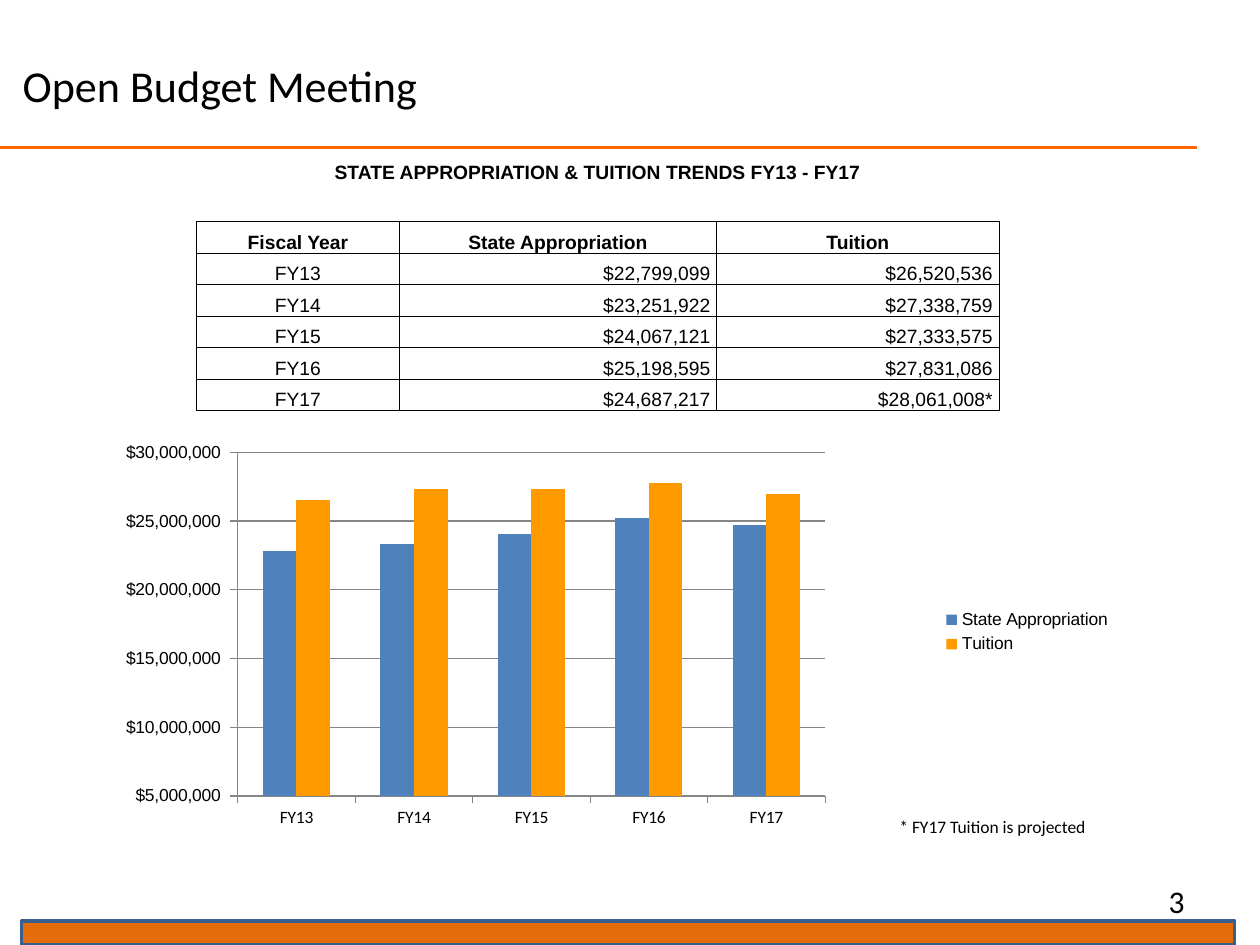
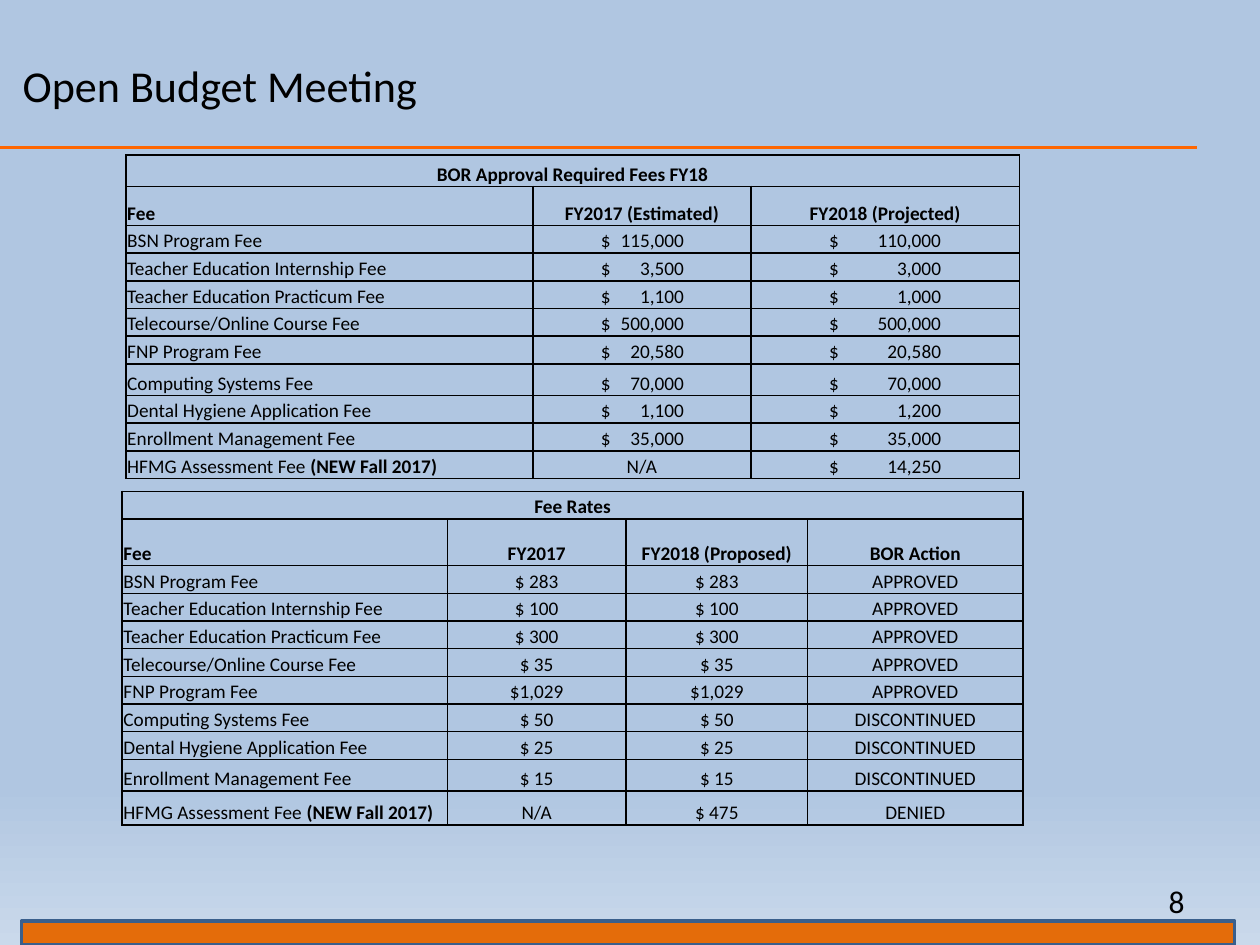
from lxml import etree
from pptx import Presentation
from pptx.chart.data import CategoryChartData
from pptx.dml.color import RGBColor
from pptx.enum.chart import XL_CHART_TYPE, XL_LEGEND_POSITION, XL_TICK_MARK
from pptx.enum.shapes import MSO_CONNECTOR, MSO_SHAPE
from pptx.enum.text import MSO_ANCHOR, PP_ALIGN
from pptx.oxml import parse_xml
from pptx.oxml.ns import nsdecls, qn
from pptx.util import Inches, Pt

LEFT, CENTER, RIGHT = PP_ALIGN.LEFT, PP_ALIGN.CENTER, PP_ALIGN.RIGHT
MIDDLE, BOTTOM = MSO_ANCHOR.MIDDLE, MSO_ANCHOR.BOTTOM
CLUSTERED = XL_CHART_TYPE.COLUMN_CLUSTERED
LEGEND_RIGHT = XL_LEGEND_POSITION.RIGHT
TICK_OUTSIDE = XL_TICK_MARK.OUTSIDE
STRAIGHT = MSO_CONNECTOR.STRAIGHT
RECTANGLE = MSO_SHAPE.RECTANGLE

BLACK = RGBColor(0x00, 0x00, 0x00)
WHITE = RGBColor(0xFF, 0xFF, 0xFF)
RULE_ORANGE = RGBColor(0xFF, 0x66, 0x00)
BAND_ORANGE = RGBColor(0xE4, 0x6C, 0x0A)
BAND_EDGE = RGBColor(0x3A, 0x5F, 0x8C)
SKY = RGBColor(0xB0, 0xC6, 0xE1)
PALE_SKY = RGBColor(0xCA, 0xD9, 0xEB)
STATE_BLUE = RGBColor(0x4F, 0x81, 0xBD)
TUITION_ORANGE = RGBColor(0xFF, 0x99, 0x00)
AXIS_GRAY = RGBColor(0x86, 0x86, 0x86)

deck = Presentation()
deck.slide_width, deck.slide_height = Inches(10), Inches(7.5)
STEP = deck.slide_width // 1000


def grid(*steps):
    return [STEP * step for step in steps]


def write(paragraph, text, align, size, name="Calibri", bold=False):
    paragraph.alignment = align
    for index, part in enumerate(text.split("|")):
        span = paragraph.add_run()
        span.text = part
        values = {"size": Pt(size), "name": name, "bold": bold or index > 0}
        for attribute, value in values.items():
            setattr(span.font, attribute, value)
        span.font.color.rgb = BLACK


pages = []
for number in ("3", "8"):
    page = deck.slides.add_slide(deck.slide_layouts[5])
    pages.append(page)

    rule = page.shapes.add_connector(STRAIGHT, *grid(0, 117, 950, 117))
    rule.line.color.rgb = RULE_ORANGE
    rule.line.width = Pt(1.5)
    etree.SubElement(rule._element.spPr, qn("a:effectLst"))

    number_box = page.shapes.add_textbox(*grid(717, 695, 233, 40))
    number_box.text_frame.word_wrap = True
    number_box.text_frame.vertical_anchor = MIDDLE
    write(number_box.text_frame.paragraphs[0], number, RIGHT, 18)

    title = page.shapes.title
    title.left, title.top, title.width, title.height = grid(0, 42, 608, 50)
    title.text_frame.margin_left = STEP * 18
    title.text_frame.vertical_anchor = MIDDLE
    write(title.text_frame.paragraphs[0], "Open Budget Meeting", LEFT, 25.2)

    band = page.shapes.add_shape(RECTANGLE, *grid(17, 731, 963, 19))
    band.shadow.inherit = False
    band.fill.solid()
    band.fill.fore_color.rgb = BAND_ORANGE
    band.line.color.rgb = BAND_EDGE
    band.line.width = Pt(2)

trends_page, fees_page = pages
trends_page.background.fill.solid()
trends_page.background.fill.fore_color.rgb = WHITE
sky = fees_page.background.fill
sky.gradient()
sky.gradient_angle = 270
for stop, position, color in zip(sky.gradient_stops, (0.83, 1), (SKY, PALE_SKY)):
    stop.position = position
    stop.color.rgb = color

note = trends_page.shapes.add_textbox(*grid(704, 643, 237, 27))
note.text_frame.word_wrap = True
write(note.text_frame.paragraphs[0], "* FY17 Tuition is projected", LEFT, 10)

trends = {
    "page": trends_page, "at": (156, 121), "font": "Arial", "border": 0.5,
    "columns": (161, 252, 224), "heights": [25, 30] + [25] * 6,
    "aligns": (CENTER, RIGHT, RIGHT), "headings": 3, "first_bordered": 2,
    "spacing": 1, "tabs": {},
    "rows": [
        ("STATE APPROPRIATION & TUITION TRENDS FY13 - FY17", "", ""),
        ("", "", ""),
        ("Fiscal Year", "State Appropriation", "Tuition"),
        ("FY13", "$22,799,099", "$26,520,536"),
        ("FY14", "$23,251,922", "$27,338,759"),
        ("FY15", "$24,067,121", "$27,333,575"),
        ("FY16", "$25,198,595", "$27,831,086"),
        ("FY17", "$24,687,217", "$28,061,008*"),
    ],
}
rates = {
    "page": fees_page, "at": (97, 390), "font": "Calibri", "border": 1,
    "columns": (258, 142, 144, 171), "heights": [22, 37] + [22] * 7 + [25, 27],
    "aligns": (LEFT, CENTER, CENTER, CENTER), "headings": 2, "first_bordered": 0,
    "spacing": 1.07, "tabs": {},
    "rows": [
        ("Fee Rates", "", "", ""),
        ("Fee", "FY2017", "FY2018 (Proposed)", "BOR Action"),
        ("BSN Program Fee", "$ 283", "$ 283", "APPROVED"),
        ("Teacher Education Internship Fee", "$ 100", "$ 100", "APPROVED"),
        ("Teacher Education Practicum Fee", "$ 300", "$ 300", "APPROVED"),
        ("Telecourse/Online Course Fee", "$ 35", "$ 35", "APPROVED"),
        ("FNP Program Fee", "$1,029", "$1,029", "APPROVED"),
        ("Computing Systems Fee", "$ 50", "$ 50", "DISCONTINUED"),
        ("Dental Hygiene Application Fee", "$ 25", "$ 25", "DISCONTINUED"),
        ("Enrollment Management Fee", "$ 15", "$ 15", "DISCONTINUED"),
        ("HFMG Assessment Fee |(NEW Fall 2017)", "N/A", "$ 475", "DENIED"),
    ],
}
revenues = {
    "page": fees_page, "at": (100, 123), "font": "Calibri", "border": 1,
    "columns": (323, 173, 213), "heights": [25, 31] + [22] * 5 + [25] + [22] * 3,
    "aligns": (LEFT, CENTER, CENTER), "headings": 2, "first_bordered": 0,
    "spacing": 1.07, "tabs": {1: (54, 66), 2: (62, 89)},
    "rows": [
        ("BOR Approval Required Fees FY18", "", ""),
        ("Fee", "FY2017 (Estimated)", "FY2018 (Projected)"),
        ("BSN Program Fee", "$\t115,000", "$\t110,000"),
        ("Teacher Education Internship Fee", "$\t3,500", "$\t3,000"),
        ("Teacher Education Practicum Fee", "$\t1,100", "$\t1,000"),
        ("Telecourse/Online Course Fee", "$\t500,000", "$\t500,000"),
        ("FNP Program Fee", "$\t20,580", "$\t20,580"),
        ("Computing Systems Fee", "$\t70,000", "$\t70,000"),
        ("Dental Hygiene Application Fee", "$\t1,100", "$\t1,200"),
        ("Enrollment Management Fee", "$\t35,000", "$\t35,000"),
        ("HFMG Assessment Fee |(NEW Fall 2017)", "N/A", "$\t14,250"),
    ],
}

for layout in (trends, rates, revenues):
    rows, columns, heights = layout["rows"], layout["columns"], layout["heights"]
    frame = layout["page"].shapes.add_table(
        len(rows), len(columns), *grid(*layout["at"], sum(columns), sum(heights)))
    table = frame.table
    table.first_row = table.horz_banding = False
    for column, width in zip(table.columns, grid(*columns)):
        column.width = width
    for row, height in zip(table.rows, grid(*heights)):
        row.height = height
    table.cell(0, 0).merge(table.cell(0, len(columns) - 1))

    for row_index, texts in enumerate(rows):
        for column_index, text in enumerate(texts):
            cell = table.cell(row_index, column_index)
            heading = row_index < layout["headings"]
            align = layout["aligns"][column_index]
            if row_index == 0 or heading and column_index > 0:
                align = CENTER
            side = STEP * (5 if align == RIGHT else 1)
            margins = {"margin_left": STEP, "margin_right": side,
                       "margin_top": 0, "margin_bottom": 0}
            paragraph = cell.text_frame.paragraphs[0]
            if "\t" in text:
                indent, stop = layout["tabs"][column_index]
                margins["margin_left"] = STEP * indent
                align = LEFT
                tabs = etree.SubElement(
                    paragraph._p.get_or_add_pPr(), qn("a:tabLst"))
                etree.SubElement(
                    tabs, qn("a:tab"), pos=str(STEP * stop), algn="r")
            for attribute, value in margins.items():
                setattr(cell, attribute, value)
            cell.vertical_anchor = BOTTOM
            cell.fill.background()
            if text:
                paragraph.line_spacing = layout["spacing"]
                write(paragraph, text, align, 11, layout["font"], heading)

            offset = row_index - layout["first_bordered"]
            sides = "LRTB" if offset >= 0 else "B" if offset == -1 else ""
            for index, edge in enumerate(sides):
                cell._tc.get_or_add_tcPr().insert(index, parse_xml(
                    f'<a:ln{edge} {nsdecls("a")} w="{Pt(layout["border"])}">'
                    f'<a:solidFill><a:srgbClr val="{BLACK}"/></a:solidFill>'
                    f'</a:ln{edge}>'))

data = CategoryChartData()
data.categories = ["FY13", "FY14", "FY15", "FY16", "FY17"]
data.add_series("State Appropriation",
                (22800000, 23300000, 24100000, 25200000, 24700000))
data.add_series("Tuition", (26500000, 27300000, 27300000, 27800000, 27000000))
chart = trends_page.shapes.add_chart(
    CLUSTERED, *grid(100, 350, 792, 307), data).chart
chart.has_title = False
chart.has_legend = True
chart.legend.position = LEGEND_RIGHT
chart.legend.include_in_layout = False

plot = chart.plots[0]
plot.gap_width = 150
plot.overlap = 0
plot.vary_by_categories = False
for series, color in zip(plot.series, (STATE_BLUE, TUITION_ORANGE)):
    series.format.fill.solid()
    series.format.fill.fore_color.rgb = color

amounts, years = chart.value_axis, chart.category_axis
scale = {"minimum_scale": 5000000, "maximum_scale": 30000000,
         "major_unit": 5000000, "has_major_gridlines": True}
for attribute, value in scale.items():
    setattr(amounts, attribute, value)
amounts.tick_labels.number_format = '"$"#,##0_);\\("$"#,##0\\)'
amounts.tick_labels.number_format_is_linked = False
for axis in (amounts, years):
    axis.major_tick_mark = TICK_OUTSIDE
for line in (amounts.format.line, years.format.line,
             amounts.major_gridlines.format.line):
    line.color.rgb = AXIS_GRAY
    line.width = Pt(0.75)

fonts = ((chart.font, "Calibri"), (years.tick_labels.font, "Calibri"),
         (amounts.tick_labels.font, "Arial"), (chart.legend.font, "Arial"))
for font, name in fonts:
    font.name = name
    font.size = Pt(10)
    font.color.rgb = BLACK

plot_area = chart._chartSpace.chart.plotArea
for old_layout in plot_area.findall(qn("c:layout")):
    plot_area.remove(old_layout)
plot_layout = parse_xml(
    f'<c:layout {nsdecls("c")}><c:manualLayout><c:layoutTarget val="inner"/>'
    '<c:xMode val="edge"/><c:yMode val="edge"/><c:x val="0.11"/>'
    '<c:y val="0.03"/><c:w val="0.59"/><c:h val="0.9"/>'
    '</c:manualLayout></c:layout>')
plot_area.insert(0, plot_layout)

deck.save("out.pptx")
